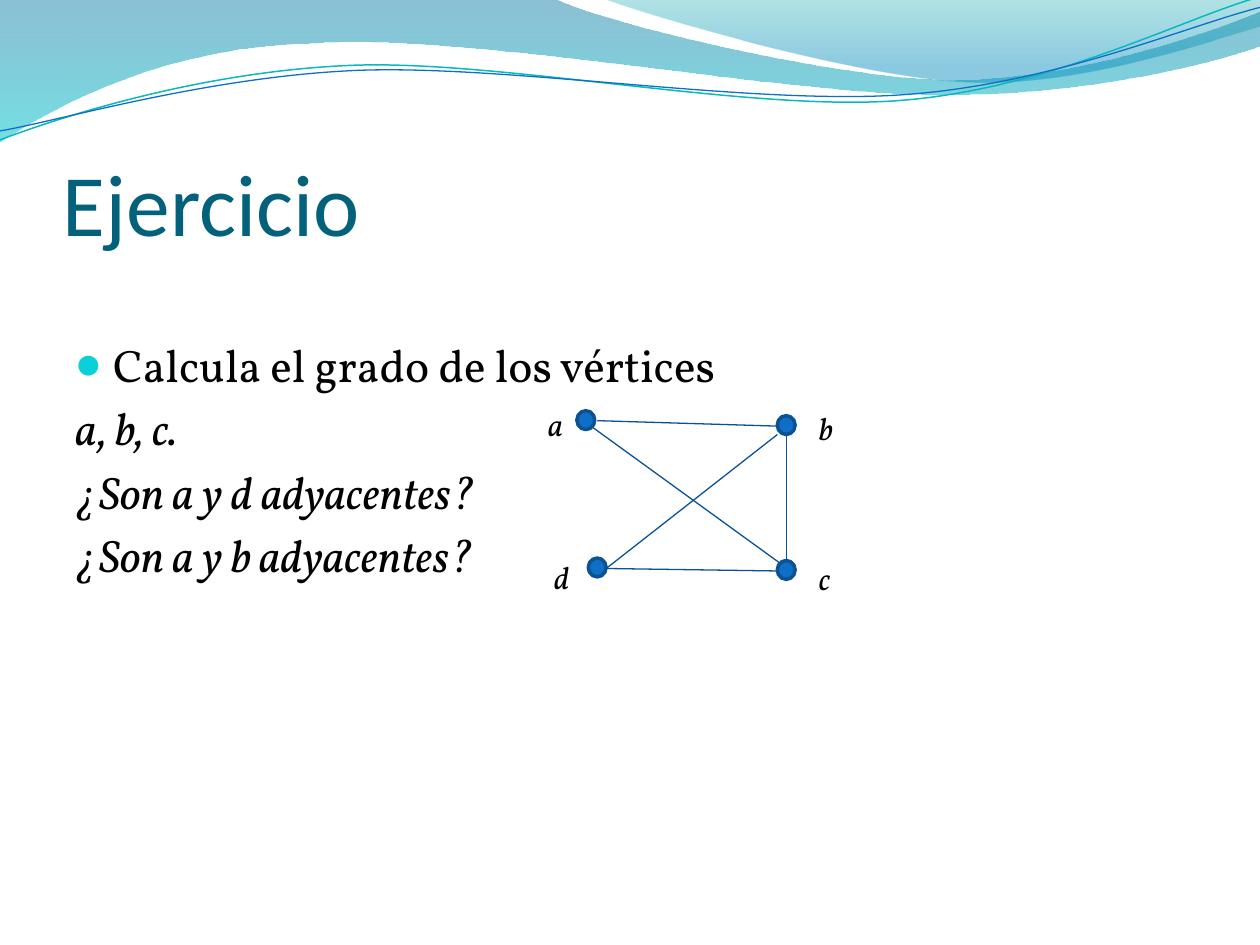
from lxml import etree
from pptx import Presentation
from pptx.dml.color import RGBColor
from pptx.enum.shapes import MSO_CONNECTOR, MSO_SHAPE
from pptx.enum.text import MSO_ANCHOR
from pptx.oxml.ns import qn
from pptx.util import Cm, Pt

BLACK = RGBColor(0x00, 0x00, 0x00)
TITLE_TEAL = RGBColor(0x04, 0x61, 0x7B)
BULLET_CYAN = RGBColor(0x0B, 0xD0, 0xD9)
WAVE_TEAL = RGBColor(0x0A, 0xB8, 0xBF)
BLUE = RGBColor(0x0F, 0x6F, 0xC6)
VERTEX_EDGE = RGBColor(0x0B, 0x52, 0x92)
EDGE_BLUE = RGBColor(0x09, 0x52, 0x95)

# Gradient stops: position, colour, opacity in percent
WIDE_STOPS = [(0, RGBColor(0x00, 0x74, 0xA1), 45), (1, RGBColor(0x00, 0xC6, 0xCF), 55)]
SHORT_STOPS = [(0, RGBColor(0x00, 0xA1, 0xA9), 30), (0.8, RGBColor(0x00, 0x8B, 0xBF), 45)]

# Outlines in cm: a pair is a corner, six numbers are a Bezier curve
WIDE_WAVE = [
    (0, 0), (11.18, -0.03),
    (12.09, 0.43, 16.87, 1.6, 19.25, 1.6),
    (21.67, 1.6, 24.33, 0.66, 25.4, 0.23), (25.43, 0.91),
    (24.97, 1.12, 22.1, 1.93, 18.95, 1.91),
    (15.8, 1.91, 9.7, 0.71, 6.53, 0.86),
    (3.28, 0.91, 1.17, 2.11, -0.03, 2.87),
]
SHORT_WAVE = [
    (12.17, -0.03),
    (12.93, 0.28, 17.32, 1.57, 19.53, 1.65),
    (21.74, 1.75, 24.41, 0.81, 25.4, 0.53), (25.4, 0),
]
TEAL_LINE = [
    (0, 2.82),
    (1.22, 2.36, 4.01, 1.45, 7.04, 1.32),
    (10.03, 1.19, 15.06, 2.26, 18.11, 2.03),
    (21.16, 1.8, 23.83, 0.38, 25.35, -0.05),
]
BLUE_LINE = [
    (0, 2.64),
    (1.19, 2.44, 4.17, 1.55, 7.19, 1.42),
    (10.24, 1.3, 15.16, 2.13, 18.21, 1.91),
    (21.23, 1.7, 23.9, 0.53, 25.4, 0.15),
]

# Graph: vertex centre and label corner, then edge ends, in cm
VERTEX_WIDTH, VERTEX_HEIGHT = 0.36, 0.38
VERTICES = {
    "a": ((11.81, 8.47), (10.8, 8.05)),
    "b": ((15.85, 8.57), (16.26, 8.13)),
    "c": ((15.85, 11.49), (16.26, 11.15)),
    "d": ((12.04, 11.44), (10.92, 11.13)),
}
EDGES = [
    ((11.94, 8.61), (15.72, 11.35)),
    ((12.22, 11.46), (15.67, 8.76)),
    ((12.04, 8.48), (15.67, 8.59)),
    ((15.85, 8.76), (15.85, 11.3)),
    ((12.22, 11.46), (15.67, 11.51)),
]


def bend(wave, pieces):
    """Turn the straight segments that stand for curves into Bezier curves."""
    segments = list(wave._element.iter(qn("a:lnTo")))
    for segment, piece in zip(segments, pieces):
        if len(piece) == 2:
            continue
        curve = etree.Element(qn("a:cubicBezTo"))
        for x, y in zip(piece[0::2], piece[1::2]):
            etree.SubElement(curve, qn("a:pt"), x=str(Cm(x) - wave.left),
                             y=str(Cm(y) - wave.top))
        segment.getparent().replace(segment, curve)


def add_wave(page, outline, stops=None, color=None, width=0.75):
    """Draw a closed wave with a gradient, or an open line in one colour."""
    points = [(Cm(piece[-2]), Cm(piece[-1])) for piece in outline]
    builder = page.shapes.build_freeform(*points[0])
    builder.add_line_segments(points[1:], close=stops is not None)
    wave = builder.convert_to_shape()
    bend(wave, outline[1:])
    wave.shadow.inherit = False
    if stops is None:
        wave.fill.background()
        wave.line.color.rgb = color
        wave.line.width = Pt(width)
        return
    wave.line.fill.background()
    wave.fill.gradient()
    wave.fill.gradient_angle = 270
    for stop, (position, rgb, _) in zip(wave.fill.gradient_stops, stops):
        stop.position = position
        stop.color.rgb = rgb
    for node, (_, _, opacity) in zip(wave._element.spPr.iter(qn("a:srgbClr")), stops):
        etree.SubElement(node, qn("a:alpha"), val=str(opacity * 1000))


def add_text(page, lines, left, top, width, height, *, size, font="Vollkorn",
             color=BLACK, italic=False, anchor=MSO_ANCHOR.TOP, side=0.25,
             bottom=0.13, gap=0):
    """Add a text box with one paragraph per line and return its paragraphs."""
    box = page.shapes.add_textbox(Cm(left), Cm(top), Cm(width), Cm(height))
    frame = box.text_frame
    frame.word_wrap = True
    frame.vertical_anchor = anchor
    frame.margin_left = frame.margin_right = Cm(side)
    frame.margin_bottom = Cm(bottom)
    for index, line in enumerate(lines):
        para = frame.add_paragraph() if index else frame.paragraphs[0]
        para.space_after = Pt(gap)
        span = para.add_run()
        span.text = line
        span.font.size = Pt(size)
        span.font.name = font
        span.font.italic = italic
        span.font.color.rgb = color
    return frame.paragraphs


def add_bullet(para, color, indent=0.76):
    """Give a paragraph a round bullet with a hanging indent."""
    settings = para._p.get_or_add_pPr()
    settings.set("marL", str(Cm(indent)))
    settings.set("indent", str(-Cm(indent)))
    tint = etree.SubElement(settings, qn("a:buClr"))
    etree.SubElement(tint, qn("a:srgbClr"), val=str(color))
    etree.SubElement(settings, qn("a:buSzPct"), val="95000")
    etree.SubElement(settings, qn("a:buFont"), typeface="Calibri")
    etree.SubElement(settings, qn("a:buChar"), char="●")


def add_vertex(page, name, center, corner):
    """Draw a vertex and its label."""
    x, y = center
    dot = page.shapes.add_shape(
        MSO_SHAPE.OVAL, Cm(x - VERTEX_WIDTH / 2), Cm(y - VERTEX_HEIGHT / 2),
        Cm(VERTEX_WIDTH), Cm(VERTEX_HEIGHT))
    dot.shadow.inherit = False
    dot.fill.solid()
    dot.fill.fore_color.rgb = BLUE
    dot.line.color.rgb = VERTEX_EDGE
    dot.line.width = Pt(2)
    add_text(page, [name], *corner, 0.71, 0.64, size=18, italic=True)


def add_edge(page, start, end):
    """Join two vertices with a thin line."""
    edge = page.shapes.add_connector(
        MSO_CONNECTOR.STRAIGHT, *(Cm(value) for value in start + end))
    edge.line.color.rgb = EDGE_BLUE
    edge.line.width = Pt(0.75)
    etree.SubElement(edge._element.spPr, qn("a:effectLst"))


def main():
    deck = Presentation()
    deck.slide_width, deck.slide_height = Cm(25.4), Cm(19.05)
    page = deck.slides.add_slide(deck.slide_layouts[6])

    # Waves along the top
    add_wave(page, WIDE_WAVE, stops=WIDE_STOPS)
    add_wave(page, SHORT_WAVE, stops=SHORT_STOPS)
    add_wave(page, TEAL_LINE, color=WAVE_TEAL, width=0.85)
    add_wave(page, BLUE_LINE, color=BLUE)

    # Title and questions
    add_text(page, ["Ejercicio"], 1.27, 1.95, 22.86, 3.18, size=50, font="Calibri",
             color=TITLE_TEAL, anchor=MSO_ANCHOR.BOTTOM, side=0, bottom=0)
    questions = add_text(
        page,
        ["Calcula el grado de los vértices", "a, b, c.",
         "¿Son a y d adyacentes?", "¿Son a y b adyacentes?"],
        1.27, 6.66, 22.86, 10.88, size=26, italic=True, gap=5.2)
    questions[0].runs[0].font.italic = False
    add_bullet(questions[0], BULLET_CYAN)

    # Graph
    for name, (center, corner) in VERTICES.items():
        add_vertex(page, name, center, corner)
    for start, end in EDGES:
        add_edge(page, start, end)

    deck.save("out.pptx")


if __name__ == "__main__":
    main()
